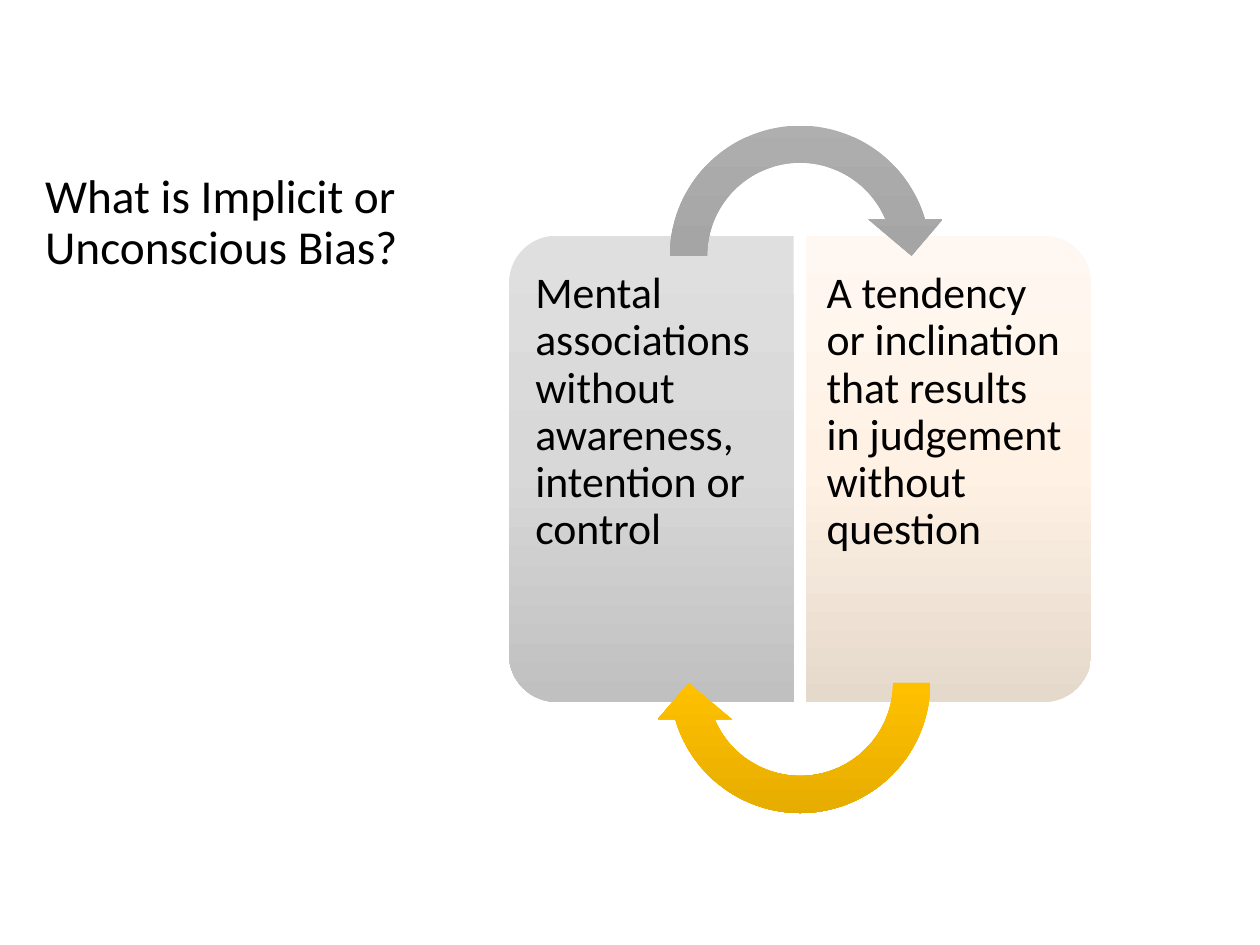
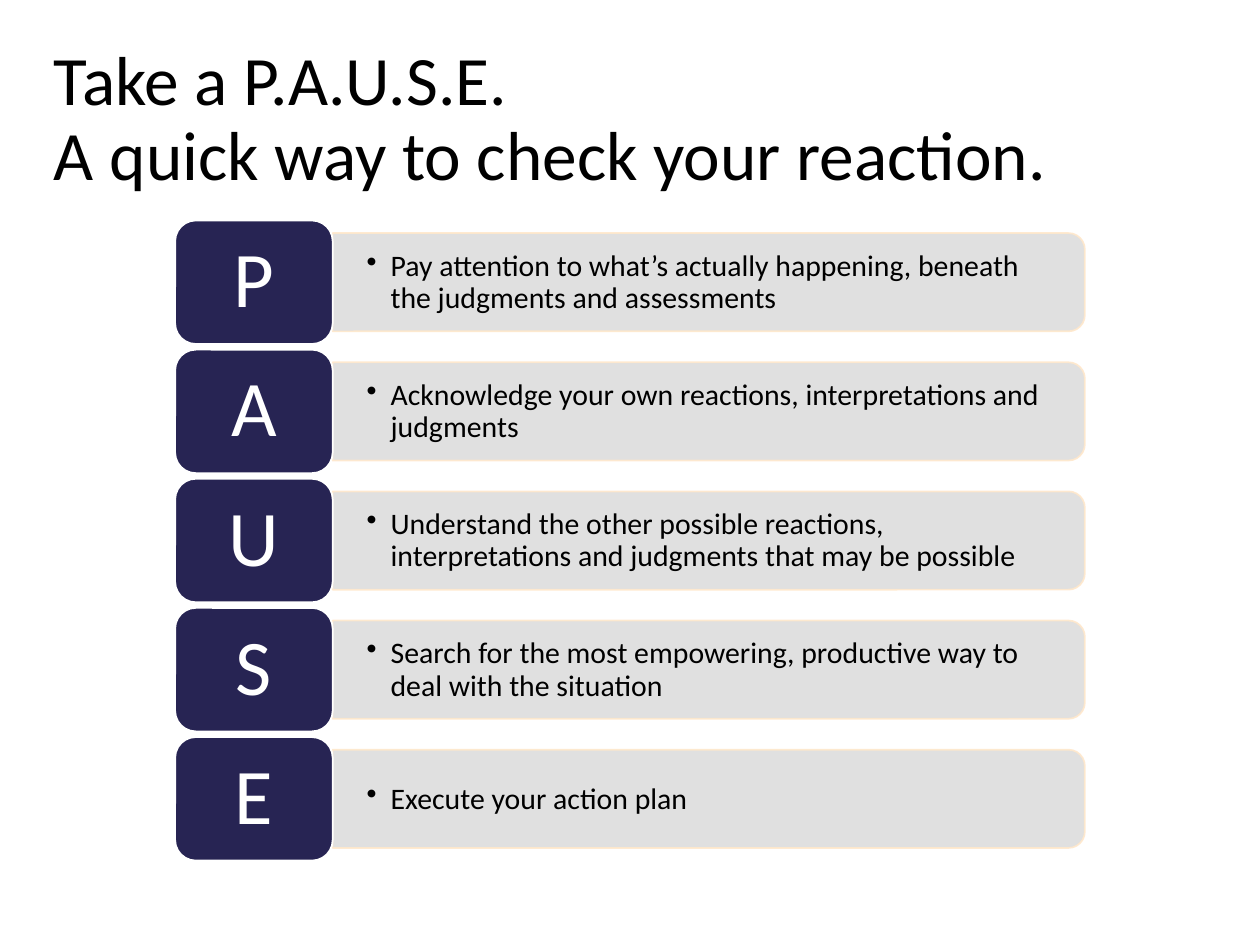
from dataclasses import dataclass

from lxml import etree
from pptx import Presentation
from pptx.dml.color import RGBColor
from pptx.enum.shapes import MSO_SHAPE
from pptx.enum.text import MSO_ANCHOR, PP_ALIGN
from pptx.oxml.ns import qn
from pptx.shapes.autoshape import Shape
from pptx.slide import Slide
from pptx.util import Inches, Pt

ROUND_TOP = MSO_SHAPE.ROUND_2_SAME_RECTANGLE
ROUNDED = MSO_SHAPE.ROUNDED_RECTANGLE
CIRCULAR_ARROW = MSO_SHAPE.CIRCULAR_ARROW
TOP, MIDDLE = MSO_ANCHOR.TOP, MSO_ANCHOR.MIDDLE
LEFT, CENTER = PP_ALIGN.LEFT, PP_ALIGN.CENTER


@dataclass(frozen=True)
class Theme:
    font: str = "Calibri"
    ink: str = "000000"
    white: str = "FFFFFF"
    navy: str = "272453"
    bar: str = "D9D9D9"
    bar_edge: str = "FFE8CC"
    gray_panel: tuple[str, ...] = ("DFDFDF", "D8D8D8", "C0C0C0")
    cream_panel: tuple[str, ...] = ("FFF8F2", "FFF2E5", "E5D9CC")
    gray_arrow: tuple[str, ...] = ("AFAFAF", "A5A5A5", "939393")
    gold_arrow: tuple[str, ...] = ("FFC500", "FFC000", "E3AA00")
    side_title: float = 27
    top_title: float = 39.6
    panel_text: float = 25
    bar_text: float = 17
    letter: float = 45
    line_spacing: float = 0.9


@dataclass(frozen=True)
class Frame:
    left: float
    top: float
    width: float
    height: float

    def quarter_turned(self) -> "Frame":
        shift = (self.width - self.height) / 2
        return Frame(self.left + shift, self.top - shift, self.height, self.width)

    def inset(self, margin: float) -> "Frame":
        return Frame(self.left + margin, self.top + margin,
                     self.width - 2 * margin, self.height - 2 * margin)

    def lengths(self) -> list[int]:
        return [Inches(v) for v in (self.left, self.top, self.width, self.height)]


@dataclass(frozen=True)
class TextStyle:
    size: float
    color: str
    anchor: MSO_ANCHOR = MIDDLE
    align: PP_ALIGN = LEFT
    margins: tuple[float, ...] = (0.1, 0.05, 0.1, 0.05)
    bullet_indent: float = 0


@dataclass(frozen=True)
class Panel:
    text: str
    frame: Frame
    text_frame: Frame
    rotation: int
    colors: tuple[str, ...]
    margins: tuple[float, ...]


@dataclass(frozen=True)
class Arrow:
    top: float
    rotation: int
    colors: tuple[str, ...]


@dataclass(frozen=True)
class Step:
    letter: str
    advice: str


THEME = Theme()
PANELS = (
    Panel("Mental associations without awareness, intention or control",
          Frame(4.04, 1.87, 2.26, 3.7), Frame(4.15, 1.98, 2.15, 3.48),
          270, THEME.gray_panel, (0.1, 0.17, 0.16, 0.17)),
    Panel("A tendency or inclination that results in judgement without question",
          Frame(6.4, 1.87, 2.26, 3.7), Frame(6.4, 1.98, 2.15, 3.48),
          90, THEME.cream_panel, (0.16, 0.17, 0.1, 0.17)),
)
ARROWS = (Arrow(0.85, 0, THEME.gray_arrow), Arrow(4.24, 180, THEME.gold_arrow))
ARROW_ADJUSTMENTS = (0.125, 11.423, 204.577, 108, 0.125)
STEPS = (
    Step("P", "Pay attention to what’s actually happening, beneath the judgments and assessments"),
    Step("A", "Acknowledge your own reactions, interpretations and judgments"),
    Step("U", "Understand the other possible reactions, interpretations and judgments "
              "that may be possible"),
    Step("S", "Search for the most empowering, productive way to deal with the situation"),
    Step("E", "Execute your action plan"),
)
FIRST_STEP_TOP = 1.75
STEP_PITCH = 1.025


def add_text(slide: Slide, frame: Frame, text: str, style: TextStyle) -> None:
    body = slide.shapes.add_textbox(*frame.lengths()).text_frame
    body.word_wrap = True
    body.vertical_anchor = style.anchor
    body.margin_left, body.margin_top, body.margin_right, body.margin_bottom = map(
        Inches, style.margins)
    paragraph = body.paragraphs[0]
    paragraph.alignment = style.align
    paragraph.line_spacing = THEME.line_spacing
    if style.bullet_indent:
        properties = paragraph._p.get_or_add_pPr()
        properties.set("marL", str(Inches(style.bullet_indent)))
        properties.set("indent", str(-Inches(style.bullet_indent)))
        etree.SubElement(properties, qn("a:buChar"), char="•")
    for index, line in enumerate(text.split("\n")):
        if index:
            paragraph.add_line_break()
        run = paragraph.add_run()
        run.text = line
        run.font.name = THEME.font
        run.font.size = Pt(style.size)
        run.font.color.rgb = RGBColor.from_string(style.color)


def add_block(slide: Slide, preset: MSO_SHAPE, frame: Frame, rotation: int = 0) -> Shape:
    placed = frame.quarter_turned() if rotation in (90, 270) else frame
    block = slide.shapes.add_shape(preset, *placed.lengths())
    block.rotation = rotation
    block.shadow.inherit = False
    block.line.fill.background()
    return block


def fill_gradient(block: Shape, colors: tuple[str, ...]) -> None:
    block.fill.background()
    gradient = etree.Element(qn("a:gradFill"), rotWithShape="0")
    stops = etree.SubElement(gradient, qn("a:gsLst"))
    for index, color in enumerate(colors):
        stop = etree.SubElement(stops, qn("a:gs"), pos=str(index * 50000))
        etree.SubElement(stop, qn("a:srgbClr"), val=color)
    etree.SubElement(gradient, qn("a:lin"), ang="5400000", scaled="0")
    properties = block._element.spPr
    properties.replace(properties.find(qn("a:noFill")), gradient)


def fill_solid(block: Shape, color: str, edge: str) -> None:
    block.fill.solid()
    block.fill.fore_color.rgb = RGBColor.from_string(color)
    block.line.color.rgb = RGBColor.from_string(edge)
    block.line.width = Pt(1)


def set_opacity(block: Shape, fill_percent: int, line_percent: int) -> None:
    colors = block._element.spPr.iter(qn("a:srgbClr"))
    for color, percent in zip(colors, (fill_percent, line_percent)):
        etree.SubElement(color, qn("a:alpha"), val=str(percent * 1000))


def draw_panel(slide: Slide, panel: Panel) -> None:
    block = add_block(slide, ROUND_TOP, panel.frame, panel.rotation)
    fill_gradient(block, panel.colors)
    add_text(slide, panel.text_frame, panel.text,
             TextStyle(THEME.panel_text, THEME.ink, TOP, margins=panel.margins))


def draw_arrow(slide: Slide, arrow: Arrow) -> None:
    block = add_block(slide, CIRCULAR_ARROW, Frame(5.17, arrow.top, 2.36, 2.36), arrow.rotation)
    for index, value in enumerate(ARROW_ADJUSTMENTS):
        block.adjustments[index] = value
    fill_gradient(block, arrow.colors)


def draw_step(slide: Slide, step: Step, top: float) -> None:
    bar = add_block(slide, ROUND_TOP, Frame(2.64, top + 0.1, 5.97, 0.78), 90)
    fill_solid(bar, THEME.bar, THEME.bar_edge)
    set_opacity(bar, 80, 90)
    add_text(slide, Frame(2.64, top + 0.14, 5.94, 0.71), step.advice,
             TextStyle(THEME.bar_text, THEME.ink, margins=(0.27, 0.14, 0.27, 0.14),
                       bullet_indent=0.19))
    tile_frame = Frame(1.39, top, 1.25, 0.98)
    fill_solid(add_block(slide, ROUNDED, tile_frame), THEME.navy, THEME.white)
    add_text(slide, tile_frame.inset(0.05), step.letter,
             TextStyle(THEME.letter, THEME.white, align=CENTER,
                       margins=(0.19, 0.09, 0.19, 0.09)))


def add_titled_slide(deck: Presentation, title: str, frame: Frame, size: float) -> Slide:
    slide = deck.slides.add_slide(deck.slide_layouts[6])
    add_text(slide, frame, title, TextStyle(size, THEME.ink))
    return slide


def main() -> None:
    deck = Presentation()
    deck.slide_width, deck.slide_height = Inches(10), Inches(7.5)

    bias = add_titled_slide(deck, "What is Implicit or Unconscious Bias?",
                            Frame(0.26, 0.25, 3.49, 3.05), THEME.side_title)
    for panel in PANELS:
        draw_panel(bias, panel)
    for arrow in ARROWS:
        draw_arrow(bias, arrow)

    pause = add_titled_slide(deck, "Take a P.A.U.S.E.\nA quick way to check your reaction.",
                             Frame(0.33, 0.33, 9.33, 1.25), THEME.top_title)
    for index, step in enumerate(STEPS):
        draw_step(pause, step, FIRST_STEP_TOP + index * STEP_PITCH)

    deck.save("out.pptx")


if __name__ == "__main__":
    main()
